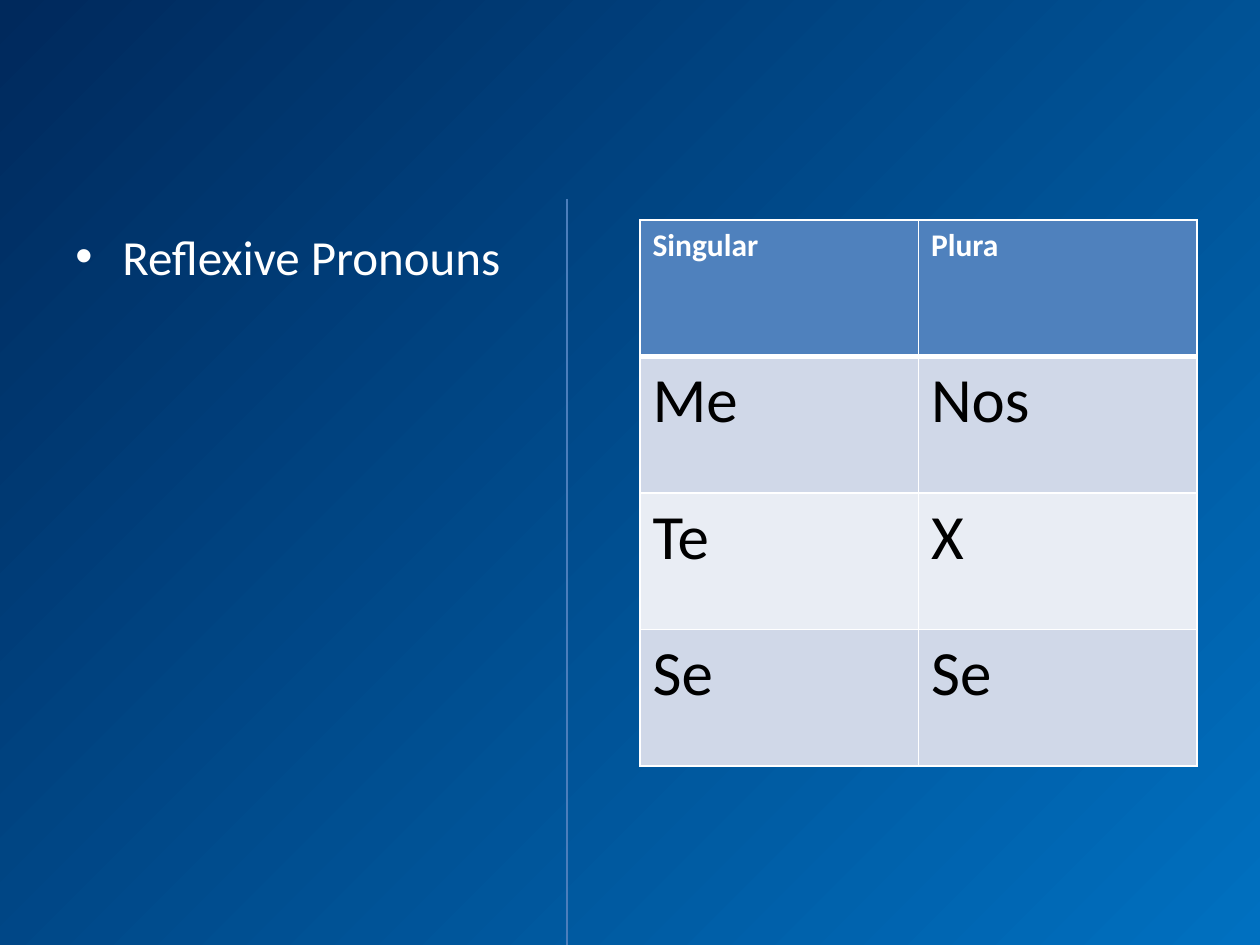
from dataclasses import dataclass

import pptx
import pptx.dml.color
import pptx.enum.shapes
import pptx.oxml
import pptx.oxml.ns
import pptx.util
from lxml import etree

TOPIC = "Reflexive Pronouns"
PRONOUNS = [
    ("Singular", "Plura"),
    ("Me", "Nos"),
    ("Te", "X"),
    ("Se", "Se"),
]

SLIDE = (1260, 945)
TOPIC_BOX = (63, 220, 557, 624)
TABLE_BOX = (640, 220, 557, 546)
DIVIDER = (567, 199, 567, 945)
BULLET_INDENT = 47


@dataclass(frozen=True)
class Theme:
    font: str = "Calibri"
    glow: str = "0070C0"
    night: str = "00295C"
    light: str = "FFFFFF"
    dark: str = "000000"
    header: str = "4F81BD"
    bands: tuple = ("D0D8E8", "E9EDF4")
    divider: str = "4B7EBC"
    topic_size: int = 28
    header_size: int = 18
    body_size: int = 36
    grid_width: int = 1
    header_rule: int = 3
    divider_width: float = 0.75


THEME = Theme()


def px(length):
    return pptx.util.Emu(round(length * 914400 / 126))


def rgb(colour):
    return pptx.dml.color.RGBColor.from_string(colour)


def add_element(parent, tag, **attributes):
    return etree.SubElement(parent, pptx.oxml.ns.qn(tag), attributes)


def add_run(paragraph, text, size, colour, bold=False):
    run = paragraph.add_run()
    run.text = text
    run.font.name = THEME.font
    run.font.size = pptx.util.Pt(size)
    run.font.color.rgb = rgb(colour)
    run.font.bold = bold


def paint_background(slide):
    """Radial gradient that spreads from the bottom right corner."""
    fill = slide.background.fill
    fill.gradient()
    for stop, colour in zip(fill.gradient_stops, (THEME.glow, THEME.night)):
        stop.color.rgb = rgb(colour)
    gradient = slide.element.find(".//" + pptx.oxml.ns.qn("a:gradFill"))
    gradient.remove(gradient.find(pptx.oxml.ns.qn("a:lin")))
    radial = add_element(gradient, "a:path", path="circle")
    add_element(radial, "a:fillToRect", l="100000", t="100000")


def add_topic(slide):
    frame = slide.shapes.add_textbox(*map(px, TOPIC_BOX)).text_frame
    frame.word_wrap = True
    paragraph = frame.paragraphs[0]
    paragraph.space_before = pptx.util.Pt(THEME.topic_size * 0.2)
    add_run(paragraph, TOPIC, THEME.topic_size, THEME.light)
    properties = paragraph._p.get_or_add_pPr()
    indent = px(BULLET_INDENT)
    properties.set("marL", str(indent))
    properties.set("indent", str(-indent))
    add_element(properties, "a:buFont", typeface="Arial")
    add_element(properties, "a:buChar", char="•")


def add_borders(cell, row):
    """The rule between header and body is heavier than the rest."""
    widths = dict.fromkeys("LRTB", THEME.grid_width)
    if row < 2:
        widths["B" if row == 0 else "T"] = THEME.header_rule
    properties = cell._tc.get_or_add_tcPr()
    for side, width in widths.items():
        border = add_element(properties, f"a:ln{side}", w=str(pptx.util.Pt(width)))
        solid = add_element(border, "a:solidFill")
        add_element(solid, "a:srgbClr", val=THEME.light)


def add_pronoun_table(slide):
    left, top, width, height = map(px, TABLE_BOX)
    rows, columns = len(PRONOUNS), len(PRONOUNS[0])
    table = slide.shapes.add_table(rows, columns, left, top, width, height).table
    for row, words in enumerate(PRONOUNS):
        is_header = row == 0
        fill = THEME.header if is_header else THEME.bands[(row - 1) % 2]
        size = THEME.header_size if is_header else THEME.body_size
        colour = THEME.light if is_header else THEME.dark
        for column, word in enumerate(words):
            cell = table.cell(row, column)
            add_borders(cell, row)
            cell.fill.solid()
            cell.fill.fore_color.rgb = rgb(fill)
            add_run(cell.text_frame.paragraphs[0], word, size, colour, is_header)


def add_divider(slide):
    divider = slide.shapes.add_connector(
        pptx.enum.shapes.MSO_CONNECTOR.STRAIGHT, *map(px, DIVIDER))
    divider.line.color.rgb = rgb(THEME.divider)
    divider.line.width = pptx.util.Pt(THEME.divider_width)
    add_element(divider.element.spPr, "a:effectLst")


def main():
    deck = pptx.Presentation()
    deck.slide_width, deck.slide_height = map(px, SLIDE)
    slide = deck.slides.add_slide(deck.slide_layouts[6])
    paint_background(slide)
    add_topic(slide)
    add_pronoun_table(slide)
    add_divider(slide)
    deck.save("out.pptx")


if __name__ == "__main__":
    main()
